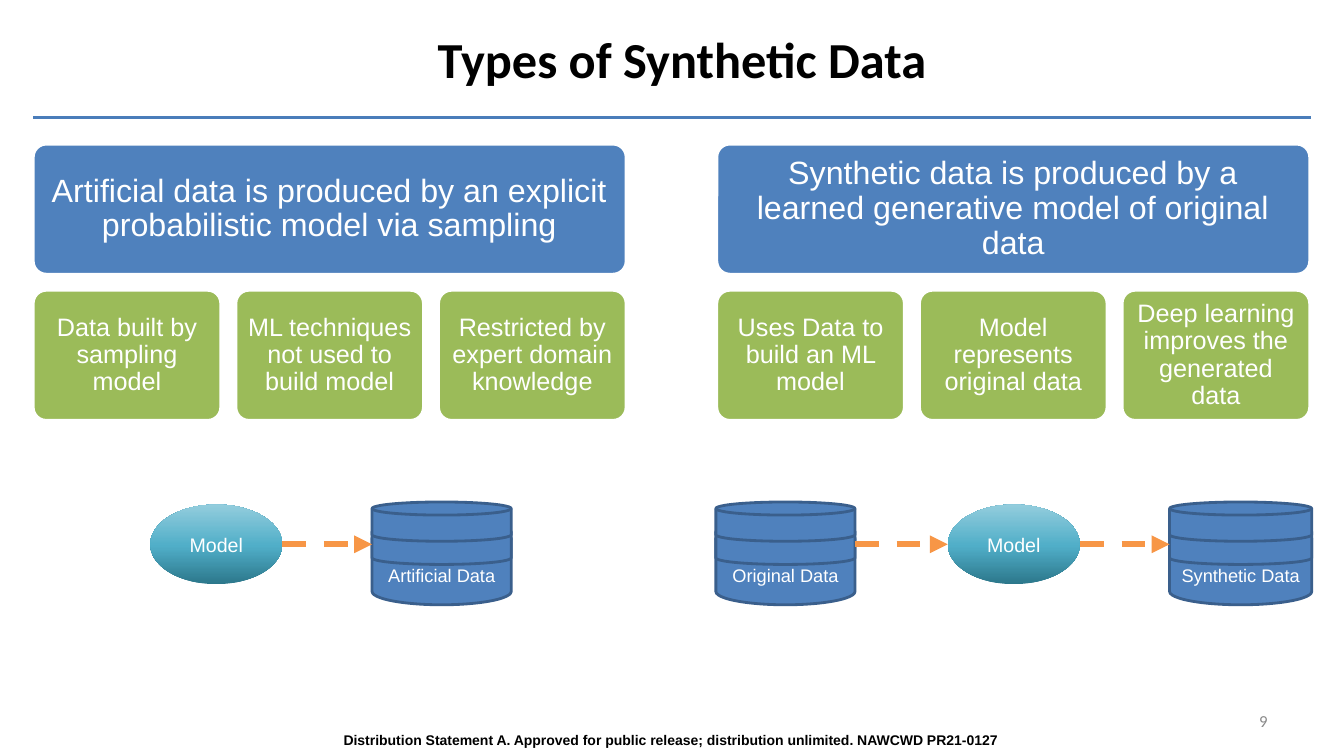
from copy import deepcopy

from lxml.etree import SubElement
from pptx import Presentation
from pptx.dml.color import RGBColor
from pptx.enum.dml import MSO_LINE
from pptx.enum.shapes import MSO_CONNECTOR, MSO_SHAPE
from pptx.enum.text import MSO_ANCHOR, PP_ALIGN
from pptx.oxml.ns import qn
from pptx.util import Inches, Pt

WHITE = RGBColor(0xFF, 0xFF, 0xFF)
BLACK = RGBColor(0x00, 0x00, 0x00)
GRAY = RGBColor(0x89, 0x89, 0x89)
BLUE = RGBColor(0x4F, 0x81, 0xBD)
DARK_BLUE = RGBColor(0x3A, 0x5F, 0x8C)
RULE_BLUE = RGBColor(0x4A, 0x7D, 0xBA)
GREEN = RGBColor(0x9B, 0xBB, 0x59)
ORANGE = RGBColor(0xF7, 0x96, 0x46)
TEAL_STOPS = [
    (0, RGBColor(0x2C, 0x77, 0x8B)),
    (0.48, RGBColor(0x50, 0xAE, 0xC8)),
    (1, RGBColor(0x93, 0xCD, 0xDD)),
]

FLOW_MIDDLE = 5.4
MODEL_WIDTH, MODEL_HEIGHT = 1.31, 0.79


def write_text(shape, text, size, color=WHITE, font="Arial", bold=False,
               align=PP_ALIGN.CENTER, anchor=MSO_ANCHOR.MIDDLE,
               margins=(0.1, 0.05), line_spacing=None):
    """Fill a shape with one paragraph; margins are (side, top and bottom)."""
    frame = shape.text_frame
    frame.word_wrap = True
    frame.vertical_anchor = anchor
    frame.margin_left = frame.margin_right = Inches(margins[0])
    frame.margin_top = frame.margin_bottom = Inches(margins[1])
    para = frame.paragraphs[0]
    para.alignment = align
    para.line_spacing = line_spacing
    span = para.add_run()
    span.text = text
    span.font.name = font
    span.font.size = Pt(size)
    span.font.bold = bold
    span.font.color.rgb = color


def add_filled_shape(page, kind, left, top, width, height, fill, line):
    shape = page.shapes.add_shape(
        kind, Inches(left), Inches(top), Inches(width), Inches(height))
    shape.shadow.inherit = False
    shape.fill.solid()
    shape.fill.fore_color.rgb = fill
    shape.line.color.rgb = line
    shape.line.width = Pt(2)
    return shape


def add_line(page, left, right, height, color, width):
    line = page.shapes.add_connector(
        MSO_CONNECTOR.STRAIGHT,
        Inches(left), Inches(height), Inches(right), Inches(height))
    line.line.color.rgb = color
    line.line.width = Pt(width)
    SubElement(line._element.spPr, qn("a:effectLst"))
    return line


def add_flow_arrow(page, left, right):
    arrow = add_line(page, left, right, FLOW_MIDDLE, ORANGE, 4.25)
    arrow.line.dash_style = MSO_LINE.DASH
    SubElement(arrow.line._get_or_add_ln(), qn("a:tailEnd"), type="triangle")


def add_card(page, left, top, width, height, fill, text, size, margin):
    card = add_filled_shape(page, MSO_SHAPE.ROUNDED_RECTANGLE,
                            left, top, width, height, fill, WHITE)
    card.adjustments[0] = 0.1
    write_text(card, text, size, margins=(margin, margin), line_spacing=0.9)


def add_definition(page, left, top, heading, details, width=5.88):
    """A blue heading card above a row of equal green cards."""
    height, row_gap, column_gap = 1.29, 0.16, 0.15
    add_card(page, left, top, width, height, BLUE, heading, 23, 0.1)
    card_width = (width - column_gap * (len(details) - 1)) / len(details)
    for column, detail in enumerate(details):
        add_card(page, left + column * (card_width + column_gap),
                 top + height + row_gap, card_width, height,
                 GREEN, detail, 18, 0.06)


def add_database(page, left, width, label):
    """Three stacked disks, the lowest and tallest one carrying the label."""
    for top, height, text in [(5.21, 0.79, label), (5.21, 0.39, ""), (4.98, 0.39, "")]:
        disk = add_filled_shape(page, MSO_SHAPE.FLOWCHART_MAGNETIC_DISK,
                                left, top, width, height, BLUE, DARK_BLUE)
        if text:
            write_text(disk, text, 13, anchor=MSO_ANCHOR.BOTTOM, margins=(0.05, 0.05))


def add_model(page, left):
    model = add_filled_shape(page, MSO_SHAPE.OVAL, left, FLOW_MIDDLE - MODEL_HEIGHT / 2,
                             MODEL_WIDTH, MODEL_HEIGHT, BLUE, BLUE)
    model.line.fill.background()
    model.fill.gradient()
    model.fill.gradient_angle = 90
    stop_list = model._element.spPr.find(".//" + qn("a:gsLst"))
    stop_list.append(deepcopy(stop_list[-1]))
    for stop, (position, color) in zip(model.fill.gradient_stops, TEAL_STOPS):
        stop.position = position
        stop.color.rgb = color
    write_text(model, "Model", 14)


def add_artificial_flow(page, left):
    database_left = left + 2.2
    add_database(page, database_left, 1.38, "Artificial Data")
    add_model(page, left)
    add_flow_arrow(page, left + MODEL_WIDTH, database_left)


def add_synthetic_flow(page, left):
    model_left, result_left, source_width = left + 2.3, left + 4.5, 1.38
    add_database(page, result_left, 1.41, "Synthetic Data")
    add_model(page, model_left)
    add_flow_arrow(page, model_left + MODEL_WIDTH, result_left)
    add_database(page, left, source_width, "Original Data")
    add_flow_arrow(page, left + source_width, model_left)


def add_title(page, text, left, top, width, height):
    title = page.shapes.title
    title.left, title.top = Inches(left), Inches(top)
    title.width, title.height = Inches(width), Inches(height)
    write_text(title, text, 36, color=BLACK, font="Calibri", bold=True)


def add_text_box(page, left, top, width, height, text, size, **text_format):
    box = page.shapes.add_textbox(
        Inches(left), Inches(top), Inches(width), Inches(height))
    write_text(box, text, size, **text_format)


def add_frame(page):
    """The rule under the title, the distribution line and the page number."""
    add_line(page, 0.33, 13, 1.17, RULE_BLUE, 2.25)
    add_text_box(page, 0.15, 7.21, 13, 0.27,
                 "Distribution Statement A. Approved for public release; "
                 "distribution unlimited. NAWCWD PR21-0127",
                 10, color=BLACK, bold=True, anchor=MSO_ANCHOR.TOP)
    add_text_box(page, 9.56, 6.95, 3.11, 0.4, "9", 12,
                 color=GRAY, font="Calibri", align=PP_ALIGN.RIGHT)


def main():
    deck = Presentation()
    deck.slide_width, deck.slide_height = Inches(13.33), Inches(7.5)
    page = deck.slides.add_slide(deck.slide_layouts[5])
    add_title(page, "Types of Synthetic Data", 0.33, 0.08, 12.87, 1)
    add_frame(page)
    add_definition(
        page, 0.33, 1.43,
        "Artificial data is produced by an explicit probabilistic model via sampling",
        ["Data built by sampling model",
         "ML techniques not used to build model",
         "Restricted by expert domain knowledge"])
    add_definition(
        page, 7.11, 1.43,
        "Synthetic data is produced by a learned generative model of original data",
        ["Uses Data to build an ML model",
         "Model represents original data",
         "Deep learning improves the generated data"])
    add_artificial_flow(page, 1.49)
    add_synthetic_flow(page, 7.1)
    deck.save("out.pptx")


if __name__ == "__main__":
    main()
